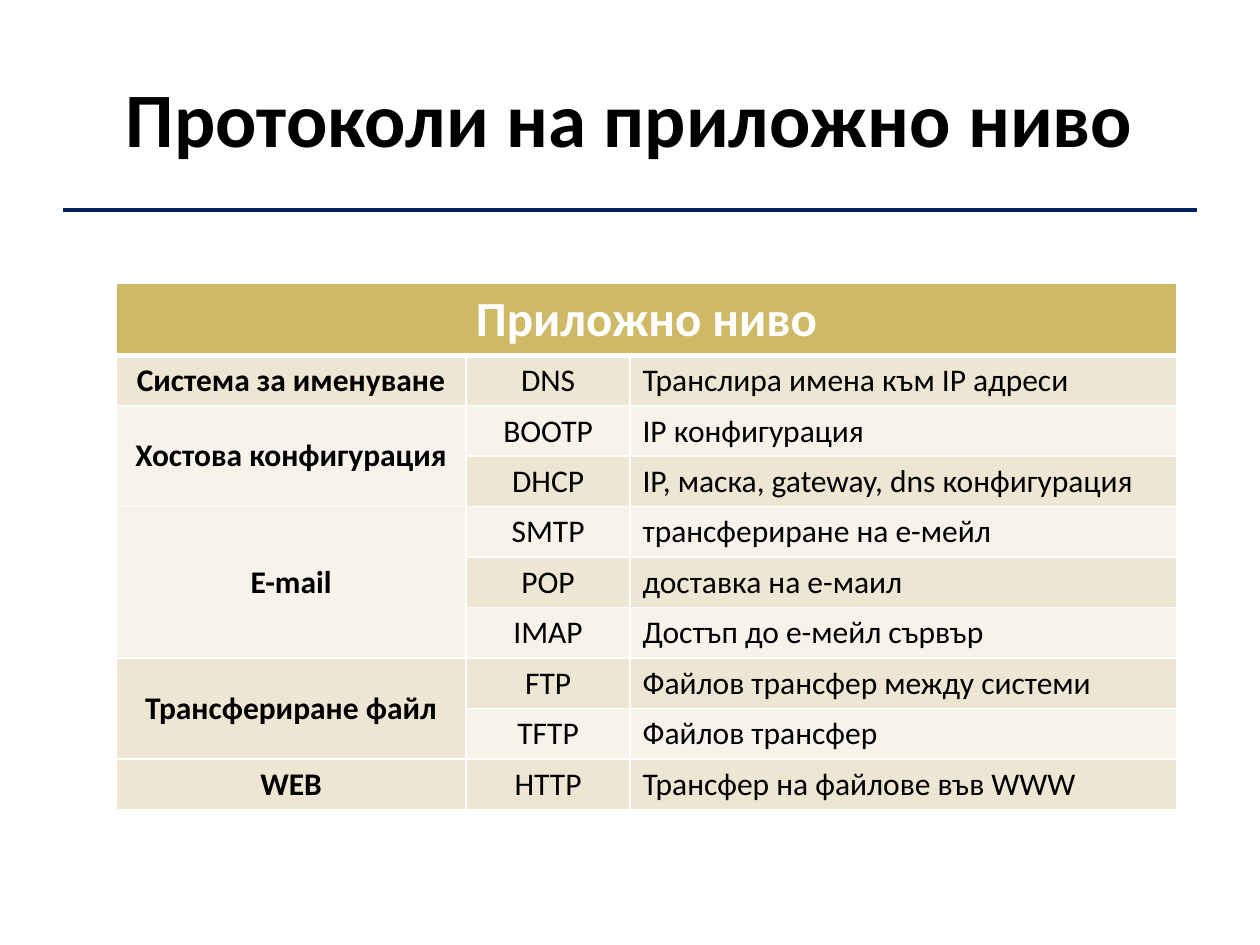
from pptx import Presentation
from pptx import util as u
from pptx.dml.color import RGBColor
from pptx.enum import shapes, text
from pptx.oxml import parse_xml
from pptx.oxml.ns import nsdecls

# Content
TITLE = "Протоколи на приложно ниво"
HEADER = "Приложно ниво"
GROUPS = [
    ("Система за именуване", [("DNS", "Транслира имена към IP адреси")]),
    ("Хостова конфигурация", [("BOOTP", "IP конфигурация"),
                              ("DHCP", "IP, маска, gateway, dns конфигурация")]),
    ("E-mail", [("SMTP", "трансфериране на е-мейл"),
                ("POP", "доставка на е-маил"),
                ("IMAP", "Достъп до е-мейл сървър")]),
    ("Трансфериране файл", [("FTP", "Файлов трансфер между системи"),
                            ("TFTP", "Файлов трансфер")]),
    ("WEB", [("HTTP", "Трансфер на файлове във WWW")]),
]

THEME = {
    "font": "Calibri", "ink": "000000", "white": "FFFFFF", "rule": "002060",
    "header": "CEB966", "bands": ("F6F3EA", "EDE6D3"),
    "title_size": 44, "header_size": 28, "body_size": 18,
    "rule_width": 2.25, "border": 1, "header_border": 3,
}

# Layout, in inches
WIDTH, HEIGHT = 10, 7.5
MARGIN = WIDTH * 0.05
TITLE_TOP, TITLE_HEIGHT, RULE_TOP = 0.3, 1.25, 1.67
TABLE_LEFT, TABLE_TOP = 0.92, 2.25
COLUMNS = (2.78, 1.3, 4.34)
HEADER_ROW, BODY_ROW = 0.57, 0.4

LEFT, CENTER = text.PP_ALIGN.LEFT, text.PP_ALIGN.CENTER
TOP, MIDDLE = text.MSO_ANCHOR.TOP, text.MSO_ANCHOR.MIDDLE


def write(frame, words, size, color, bold=False, align=CENTER):
    para = frame.paragraphs[0]
    para.text = words
    para.alignment = align
    font = para.font
    font.name, font.size, font.bold = THEME["font"], u.Pt(size), bold
    font.color.rgb = RGBColor.from_string(color)


def style_cell(cell, fill, top, bottom):
    cell.fill.solid()
    cell.fill.fore_color.rgb = RGBColor.from_string(fill)
    side = THEME["border"]
    borders = (("L", side), ("R", side), ("T", top), ("B", bottom))
    properties = cell._tc.get_or_add_tcPr()
    for position, (edge, width) in enumerate(borders):
        properties.insert(position, parse_xml(
            f'<a:ln{edge} {nsdecls("a")} w="{u.Pt(width)}"><a:solidFill>'
            f'<a:srgbClr val="{THEME["white"]}"/></a:solidFill></a:ln{edge}>'))


def add_heading(page):
    box = page.shapes.add_textbox(u.Inches(MARGIN), u.Inches(TITLE_TOP),
                                  u.Inches(WIDTH - 2 * MARGIN), u.Inches(TITLE_HEIGHT))
    box.text_frame.word_wrap = True
    box.text_frame.vertical_anchor = MIDDLE
    write(box.text_frame, TITLE, THEME["title_size"], THEME["ink"], bold=True)

    rule = page.shapes.add_connector(
        shapes.MSO_CONNECTOR.STRAIGHT, u.Inches(MARGIN), u.Inches(RULE_TOP),
        u.Inches(WIDTH - MARGIN), u.Inches(RULE_TOP))
    rule.line.color.rgb = RGBColor.from_string(THEME["rule"])
    rule.line.width = u.Pt(THEME["rule_width"])
    rule._element.spPr.append(parse_xml(f'<a:effectLst {nsdecls("a")}/>'))


def add_protocols(page):
    body_count = sum(len(protocols) for _, protocols in GROUPS)
    table = page.shapes.add_table(
        body_count + 1, len(COLUMNS), u.Inches(TABLE_LEFT), u.Inches(TABLE_TOP),
        u.Inches(sum(COLUMNS)), u.Inches(HEADER_ROW + body_count * BODY_ROW)).table
    for column, width in zip(table.columns, COLUMNS):
        column.width = u.Inches(width)

    # Row heights, fills and borders
    thin, thick = THEME["border"], THEME["header_border"]
    for index, row in enumerate(table.rows):
        row.height = u.Inches(BODY_ROW if index else HEADER_ROW)
        fill = THEME["bands"][index % 2] if index else THEME["header"]
        for cell in row.cells:
            style_cell(cell, fill, thick if index == 1 else thin,
                       thin if index else thick)

    # Header across all columns
    header = table.cell(0, 0)
    header.merge(table.cell(0, len(COLUMNS) - 1))
    write(header.text_frame, HEADER, THEME["header_size"], THEME["white"], bold=True)

    # Each group name spans the rows of its protocols
    size, ink = THEME["body_size"], THEME["ink"]
    first = 1
    for group, protocols in GROUPS:
        name_cell = table.cell(first, 0)
        if len(protocols) > 1:
            name_cell.merge(table.cell(first + len(protocols) - 1, 0))
        name_cell.vertical_anchor = MIDDLE
        write(name_cell.text_frame, group, size, ink, bold=True)
        for row, (protocol, purpose) in enumerate(protocols, first):
            write(table.cell(row, 1).text_frame, protocol, size, ink)
            write(table.cell(row, 2).text_frame, purpose, size, ink, align=LEFT)
        first += len(protocols)


def main():
    deck = Presentation()
    deck.slide_width, deck.slide_height = u.Inches(WIDTH), u.Inches(HEIGHT)
    page = deck.slides.add_slide(deck.slide_layouts[6])
    add_heading(page)
    add_protocols(page)
    deck.save("out.pptx")


if __name__ == "__main__":
    main()
